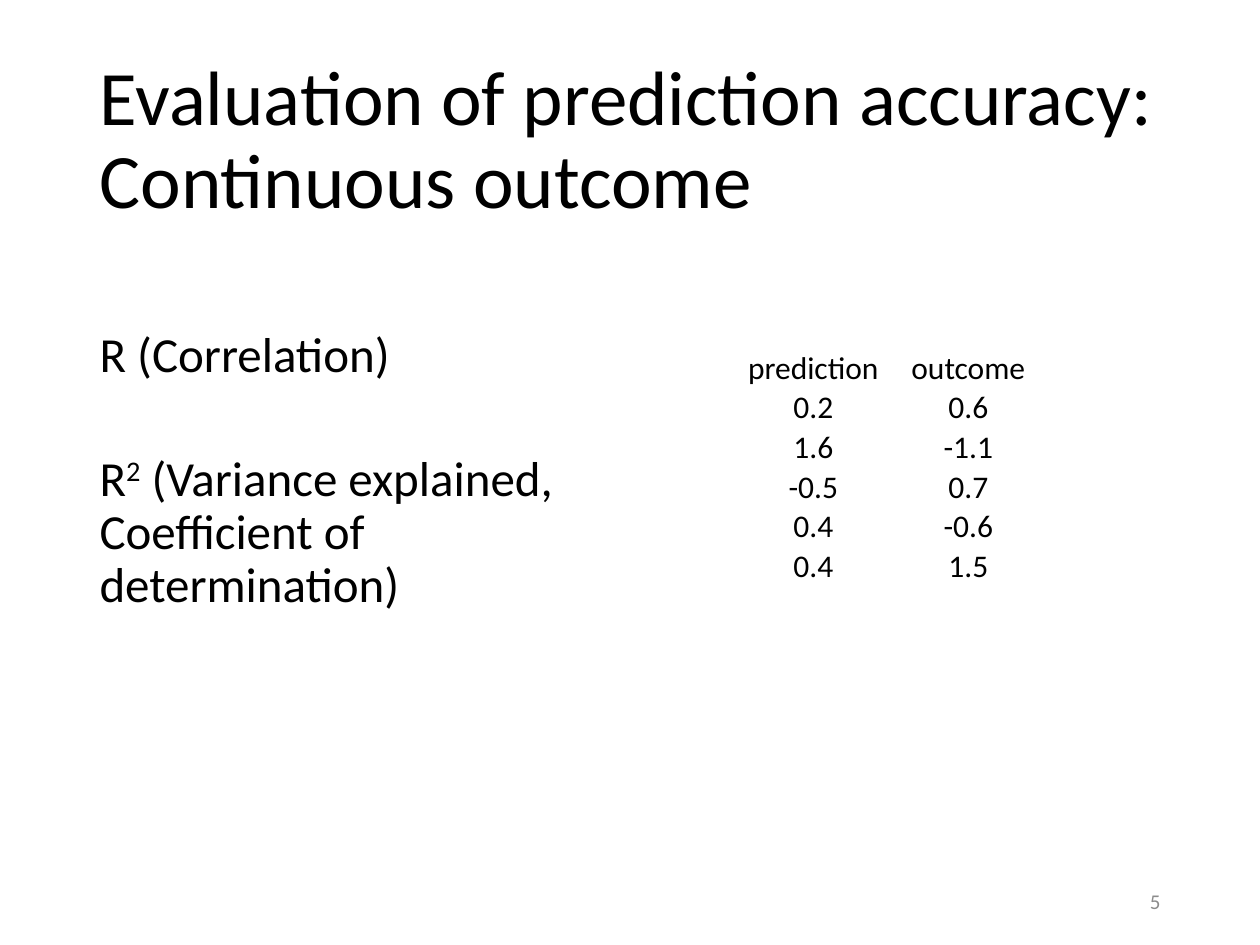
from pptx import Presentation
from pptx.dml.color import RGBColor
from pptx.enum.text import MSO_ANCHOR, MSO_AUTO_SIZE, PP_ALIGN
from pptx.oxml.xmlchemy import OxmlElement
from pptx.util import Inches, Pt

WIDE, HIGH = 10, 7.5


def hue(code):
    return RGBColor.from_string(code)


class Deck:
    font = "Calibri"
    ink = "000000"
    gray = "8C8C8C"

    def __init__(self):
        self.file = Presentation()
        self.file.slide_width = Inches(WIDE)
        self.file.slide_height = Inches(HIGH)
        self.slide = self.file.slides.add_slide(self.file.slide_layouts[1])

    def box(self, x, y, w, h):
        return [Inches(n) for n in (x * WIDE, y * HIGH, w * WIDE, h * HIGH)]

    def place(self, shape, area):
        shape.left, shape.top, shape.width, shape.height = self.box(*area)
        frame = shape.text_frame
        frame.word_wrap = True
        frame.auto_size = MSO_AUTO_SIZE.NONE
        return frame

    def words(self, para, text, size, color=None, align=PP_ALIGN.LEFT):
        para.alignment = align
        run = para.add_run()
        run.text = text
        run.font.name = self.font
        run.font.size = Pt(size)
        run.font.color.rgb = hue(color or self.ink)
        return run

    def title(self, text, area):
        frame = self.place(self.slide.shapes.title, area)
        frame.vertical_anchor = MSO_ANCHOR.MIDDLE
        para = frame.paragraphs[0]
        para.line_spacing = 0.9
        self.words(para, text, 44)

    def body(self, items, area, inset, gap):
        frame = self.place(self.slide.placeholders[1], area)
        frame.margin_top = Inches(inset)
        for row, parts in enumerate(items):
            para = frame.add_paragraph() if row else frame.paragraphs[0]
            para.line_spacing = 0.9
            para.space_before = Pt(gap if row else 0)
            props = para._p.get_or_add_pPr()
            props.set("marL", "0")
            props.set("indent", "0")
            props.append(OxmlElement("a:buNone"))
            for text, lift in parts:
                run = self.words(para, text, 28)
                if lift:
                    run.font._element.set("baseline", str(lift * 1000))

    def table(self, data, area, cols):
        grid = self.slide.shapes.add_table(len(data), len(cols), *self.box(*area)).table
        grid.first_row = grid.horz_banding = False
        for col, share in zip(grid.columns, cols):
            col.width = Inches(share * WIDE)
        for r, line in enumerate(data):
            for c, text in enumerate(line):
                cell = grid.cell(r, c)
                cell.fill.background()
                cell.vertical_anchor = MSO_ANCHOR.BOTTOM
                cell.margin_left = cell.margin_right = cell.margin_top = Inches(0.01)
                cell.margin_bottom = 0
                self.words(cell.text_frame.paragraphs[0], text, 18, align=PP_ALIGN.CENTER)

    def number(self, text, area):
        frame = self.place(self.slide.shapes.add_textbox(0, 0, 0, 0), area)
        frame.vertical_anchor = MSO_ANCHOR.MIDDLE
        self.words(frame.paragraphs[0], text, 12, self.gray, PP_ALIGN.RIGHT)


def main():
    deck = Deck()
    deck.title("Evaluation of prediction accuracy: Continuous outcome",
               (0.069, 0.4 / HIGH, 0.862, 1.45 / HIGH))
    deck.body([[("R (Correlation)", 0)],
               [("R", 0), ("2", 30),
                (" (Variance explained, Coefficient of determination)", 0)]],
              (0.069, 2 / HIGH, 0.435, 4.76 / HIGH), inset=0.62, gap=40.7)
    deck.table([("prediction", "outcome"), ("0.2", "0.6"), ("1.6", "-1.1"),
                ("-0.5", "0.7"), ("0.4", "-0.6"), ("0.4", "1.5")],
               (0.589, 2.76 / HIGH, 0.246, 1.88 / HIGH), (0.113, 0.133))
    deck.number("5", (0.706, 6.95 / HIGH, 0.225, 0.4 / HIGH))
    deck.file.save("out.pptx")


if __name__ == "__main__":
    main()
